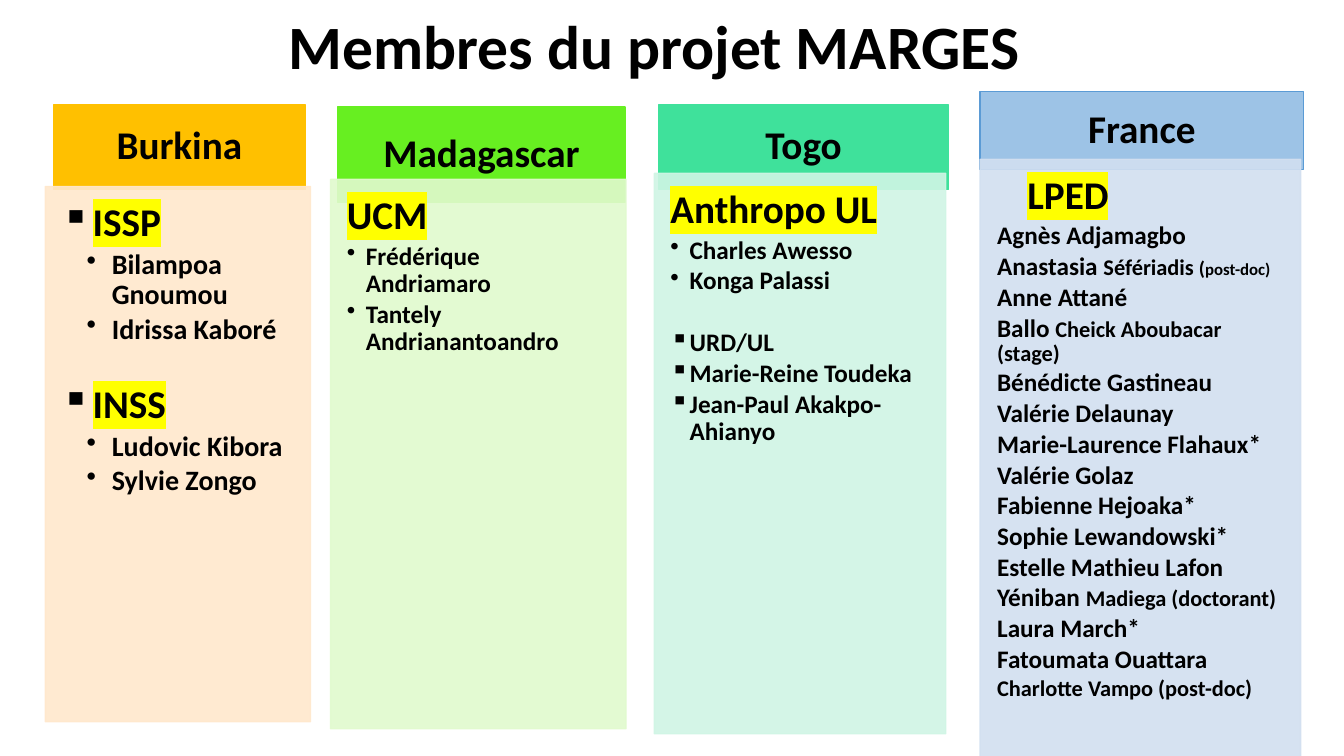
from lxml import etree
from pptx import Presentation, util as u
from pptx.dml.color import RGBColor
from pptx.enum import shapes, text
from pptx.oxml import ns

PX = 9144
WIDTH, HEIGHT = 1333, 750
BLACK, YELLOW = "000000", "FFFF00"


def px(length):
    """Turn px into EMU."""
    return u.Emu(length * PX)


def paint(color_format, color, alpha=100):
    """Set a colour from a hex string, with an opacity in percent."""
    color_format.rgb = RGBColor.from_string(color)
    if alpha < 100:
        for srgb in color_format._xFill.iter(ns.qn("a:srgbClr")):
            etree.SubElement(srgb, ns.qn("a:alpha")).set("val", str(alpha * 1000))


def write(paragraph, *runs, size=18, highlight=None, align=text.PP_ALIGN.LEFT,
          bullet=None, left=0, hang=0, before=0, after=0.14):
    """Fill a paragraph; a run is a string or a (string, size) pair."""
    paragraph.alignment = align
    paragraph.line_spacing = 0.9
    paragraph.space_before = px(before)
    properties = paragraph._p.get_or_add_pPr()
    properties.set("marL", str(px(left)))
    properties.set("indent", str(px(-hang)))
    largest = 0
    for piece in runs:
        words, points = piece if isinstance(piece, tuple) else (piece, size)
        largest = max(largest, points)
        run = paragraph.add_run()
        run.text = words
        run.font.size = u.Pt(points)
        run.font.bold = True
        run.font.fill.solid()
        paint(run.font.fill.fore_color, BLACK)
        if highlight:
            mark = etree.SubElement(run._r.get_or_add_rPr(), ns.qn("a:highlight"))
            etree.SubElement(mark, ns.qn("a:srgbClr")).set("val", highlight)
        run.font.name = "Calibri"
    paragraph.space_after = u.Pt(round(largest * after, 1))
    if bullet:
        etree.SubElement(properties, ns.qn("a:buChar")).set("char", bullet)


def set_frame(frame, insets, anchor):
    """Wrap a text frame and set its insets and anchor."""
    frame.word_wrap = True
    frame.vertical_anchor = anchor
    (frame.margin_left, frame.margin_top,
     frame.margin_right, frame.margin_bottom) = map(px, insets)


def add_panel(slide, box, fill, line, insets, anchor, alpha=100):
    """Add a filled rectangle and return its text frame."""
    panel = slide.shapes.add_shape(shapes.MSO_SHAPE.RECTANGLE, *map(px, box))
    panel.shadow.inherit = False
    panel.fill.solid()
    paint(panel.fill.fore_color, fill, alpha)
    panel.line.width = u.Pt(1)
    panel.line.fill.solid()
    paint(panel.line.fill.fore_color, line, alpha)
    set_frame(panel.text_frame, insets, anchor)
    return panel.text_frame


def add_title(slide, box, words):
    """Add the slide title."""
    frame = slide.shapes.add_textbox(*map(px, box)).text_frame
    set_frame(frame, (10, 5, 10, 5), text.MSO_ANCHOR.MIDDLE)
    write(frame.paragraphs[0], words, size=44, align=text.PP_ALIGN.CENTER, after=0)


def add_country(slide, box, country, header, header_colors, tint, members):
    """Add a country header and its member list; header is relative to box."""
    left, top, _, _ = box
    dx, dy, width, height = header
    heading = add_panel(slide, (left + dx, top + dy, width, height), *header_colors,
                        (22, 12, 22, 12), text.MSO_ANCHOR.MIDDLE)
    write(heading.paragraphs[0], country, size=28, align=text.PP_ALIGN.CENTER, after=0)
    body = add_panel(slide, box, tint, tint, (16, 16, 22, 24), text.MSO_ANCHOR.TOP, 90)
    for index, (runs, style) in enumerate(members):
        paragraph = body.add_paragraph() if index else body.paragraphs[0]
        write(paragraph, *runs, **style)


def lines(style, *entries):
    """Give every entry the same style."""
    return [(entry if isinstance(entry, list) else [entry], style) for entry in entries]


UNIT = dict(size=28, highlight=YELLOW)
BULLET_UNIT = dict(UNIT, bullet="▪", left=31, hang=31)
BURKINA_NAME = dict(size=20, bullet="•", left=50, hang=25)
NAME = dict(bullet="•", left=19, hang=19)
SQUARE_NAME = dict(NAME, bullet="▪")

COUNTRIES = [
    ((45, 185, 263, 531), "Burkina", (8, -81, 250, 84), ("FFC000", "FFC000"), "FFE8CC",
     lines(BULLET_UNIT, "ISSP")
     + lines(BURKINA_NAME, "Bilampoa Gnoumou", "Idrissa Kaboré")
     + lines(dict(BULLET_UNIT, before=35), "INSS")
     + lines(BURKINA_NAME, "Ludovic Kibora", "Sylvie Zongo")),
    ((328, 178, 293, 545), "Madagascar", (7, -72, 285, 95), ("67EF21", "67EF21"), "E1FACE",
     lines(UNIT, "UCM")
     + lines(NAME, "Frédérique Andriamaro", "Tantely Andrianantoandro")),
    ((649, 172, 289, 556), "Togo", (4, -68, 288, 84), ("3FE19B", "3FE19B"), "D0F5E5",
     lines(UNIT, "Anthropo UL")
     + lines(NAME, "Charles Awesso", "Konga Palassi")
     + lines(dict(SQUARE_NAME, before=31), "URD/UL")
     + lines(SQUARE_NAME, "Marie-Reine Toudeka", "Jean-Paul Akakpo-Ahianyo")),
    ((972, 158, 318, 597), "France", (0, -67, 321, 77), ("9DC3E6", "5B9BD5"), "D2DFF0",
     lines(dict(UNIT, left=31), "LPED")
     + lines(dict(left=1),
             "Agnès Adjamagbo",
             ["Anastasia ", ("Séfériadis ", 16), ("(", 14), ("post-doc)", 12)],
             "Anne Attané",
             ["Ballo ", ("Cheick Aboubacar (stage)", 16)],
             "Bénédicte Gastineau", "Valérie Delaunay", "Marie-Laurence Flahaux*",
             "Valérie Golaz", "Fabienne Hejoaka*", "Sophie Lewandowski*",
             "Estelle Mathieu Lafon",
             ["Yéniban ", ("Madiega (doctorant)", 16)],
             "Laura March*", "Fatoumata Ouattara",
             ("Charlotte Vampo (post-doc)", 16))),
]


def main():
    """Build and save the slide."""
    deck = Presentation()
    deck.slide_width, deck.slide_height = px(WIDTH), px(HEIGHT)
    slide = deck.slides.add_slide(deck.slide_layouts[6])
    add_title(slide, (28, 0, 1242, 98), "Membres du projet MARGES")
    for country in COUNTRIES:
        add_country(slide, *country)
    deck.save("out.pptx")


if __name__ == "__main__":
    main()
